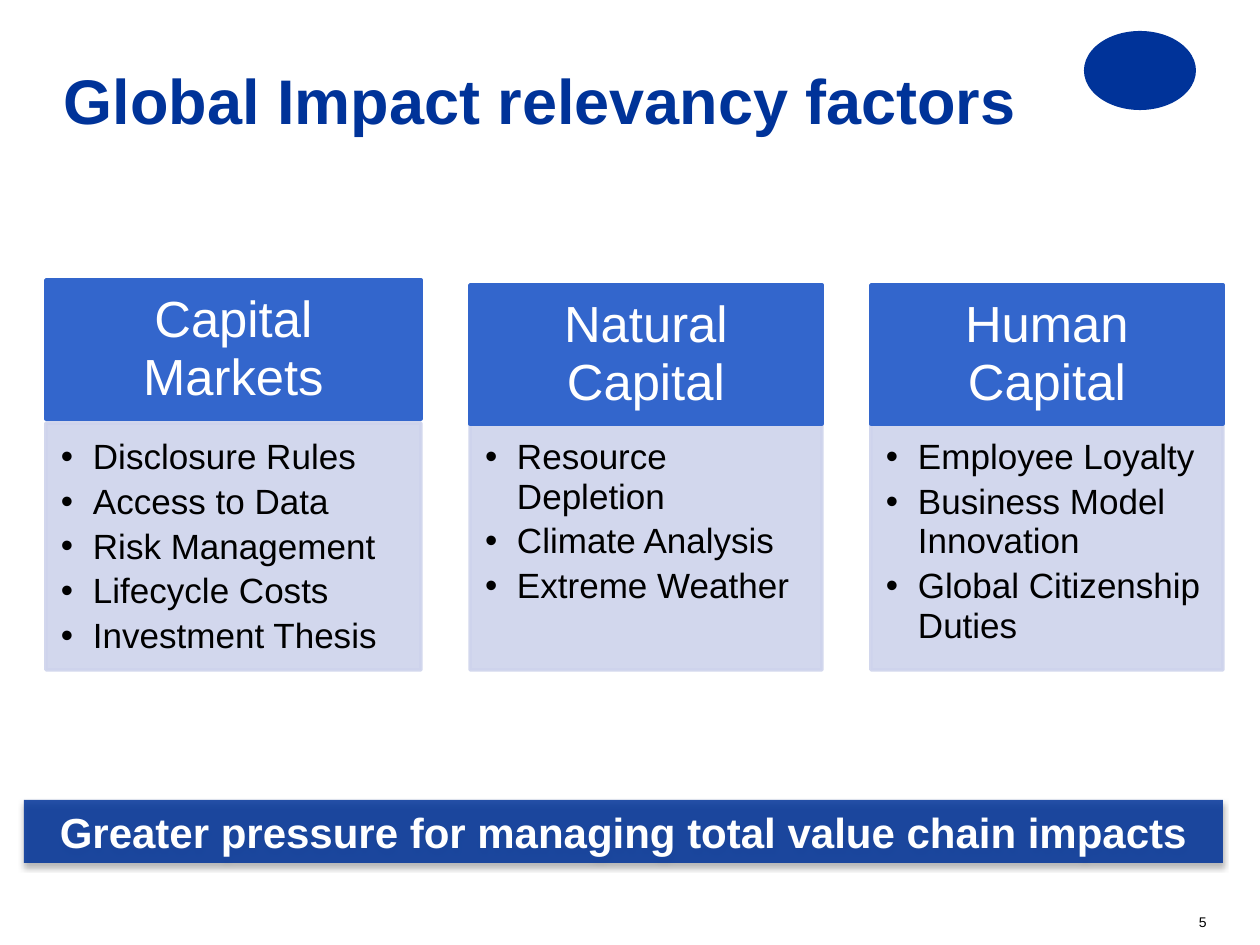
import pptx
import pptx.dml.color
import pptx.enum.shapes
import pptx.enum.text
import pptx.oxml
import pptx.oxml.ns
import pptx.util

RGBColor = pptx.dml.color.RGBColor
Anchor = pptx.enum.text.MSO_ANCHOR
Align = pptx.enum.text.PP_ALIGN
Preset = pptx.enum.shapes.MSO_SHAPE

NAVY = RGBColor(0x00, 0x33, 0x99)
BLUE = RGBColor(0x33, 0x66, 0xCC)
LAVENDER = RGBColor(0xCE, 0xD3, 0xEC)
WHITE = RGBColor(0xFF, 0xFF, 0xFF)
BLACK = RGBColor(0x00, 0x00, 0x00)

FONT = "Arial"
SCALE = 914400 / 126
HEADER_HEIGHT = 139
LIST_TOP, LIST_HEIGHT = 423, 247
LIST_INDENT = 32
LINE_SPACING = 0.94

FACTORS = [
    ("Capital Markets", 46, 280, 375,
     ["Disclosure Rules", "Access to Data", "Risk Management",
      "Lifecycle Costs", "Investment Thesis"]),
    ("Natural Capital", 470, 285, 352,
     ["Resource Depletion", "Climate Analysis", "Extreme Weather"]),
    ("Human Capital", 871, 285, 352,
     ["Employee Loyalty", "Business Model Innovation",
      "Global Citizenship Duties"]),
]


def px(length):
    return pptx.util.Emu(round(length * SCALE))


def xml(markup):
    namespace = pptx.oxml.ns.nsdecls("a")
    return pptx.oxml.parse_xml(markup.replace(">", f" {namespace}>", 1)
                               if "/>" not in markup.split(">")[0] + ">"
                               else markup.replace("/>", f" {namespace}/>", 1))


def place(shape, left, top, width, height):
    shape.left, shape.top = px(left), px(top)
    shape.width, shape.height = px(width), px(height)


def set_opacity(fill_parent, percent):
    for color in fill_parent.iter(pptx.oxml.ns.qn("a:srgbClr")):
        color.append(xml(f'<a:alpha val="{percent * 1000}"/>'))


def set_frame(frame, insets, anchor):
    frame.word_wrap = True
    frame.auto_size = pptx.enum.text.MSO_AUTO_SIZE.NONE
    frame.vertical_anchor = anchor
    (frame.margin_left, frame.margin_top,
     frame.margin_right, frame.margin_bottom) = map(px, insets)


def format_text(paragraph, size, color, bold=False, align=Align.LEFT):
    paragraph.alignment = align
    for run in paragraph.runs:
        run.font.name = FONT
        run.font.size = pptx.util.Pt(size)
        run.font.bold = bold
        run.font.color.rgb = color


def add_block(slide, preset, box, color):
    block = slide.shapes.add_shape(preset, *map(px, box))
    block.shadow.inherit = False
    block.fill.solid()
    block.fill.fore_color.rgb = color
    block.line.fill.background()
    return block


def outline(shape, color):
    shape.line.color.rgb = color
    shape.line.width = pptx.util.Pt(2)


def fill_title(title):
    place(title, 64, 63, 1008, 73)
    title.text_frame.text = "Global Impact relevancy factors"
    set_frame(title.text_frame, (0, 0, 0, 0), Anchor.MIDDLE)
    format_text(title.text_frame.paragraphs[0], 36, NAVY, bold=True)


def add_header(slide, heading, box):
    header = add_block(slide, Preset.RECTANGLE, box, BLUE)
    outline(header, BLUE)
    header.text_frame.text = heading
    set_frame(header.text_frame, (29, 16, 29, 16), Anchor.MIDDLE)
    paragraph = header.text_frame.paragraphs[0]
    paragraph.line_spacing = LINE_SPACING
    format_text(paragraph, 29, WHITE, align=Align.CENTER)


def fill_list(panel, items, box):
    place(panel, *box)
    panel.fill.solid()
    panel.fill.fore_color.rgb = LAVENDER
    outline(panel, LAVENDER)
    set_opacity(panel.element.spPr, 90)
    panel.text_frame.text = "\n".join(items)
    set_frame(panel.text_frame, (15, 15, 20, 21), Anchor.TOP)
    for paragraph in panel.text_frame.paragraphs:
        format_text(paragraph, 20, BLACK)
        paragraph.line_spacing = LINE_SPACING
        paragraph.space_before = pptx.util.Pt(0)
        paragraph.space_after = pptx.util.Pt(3)
        properties = paragraph._p.get_or_add_pPr()
        properties.set("marL", str(px(LIST_INDENT)))
        properties.set("indent", str(-px(LIST_INDENT)))
        properties.append(xml(f'<a:buFont typeface="{FONT}"/>'))
        properties.append(xml('<a:buChar char="•"/>'))


def add_banner(slide):
    banner = add_block(slide, Preset.RECTANGLE, (24, 800, 1199, 63), NAVY)
    set_opacity(banner.element.spPr, 85)
    effects = banner.element.spPr.find(pptx.oxml.ns.qn("a:effectLst"))
    effects.append(xml(
        '<a:outerShdw blurRad="44450" dist="27940" dir="5400000" rotWithShape="0">'
        '<a:srgbClr val="000000"><a:alpha val="32000"/></a:srgbClr>'
        '</a:outerShdw>'))
    banner.text_frame.text = "Greater pressure for managing total value chain impacts"
    set_frame(banner.text_frame, (13, 6, 13, 6), Anchor.MIDDLE)
    format_text(banner.text_frame.paragraphs[0], 24, WHITE, bold=True,
                align=Align.CENTER)


def add_page_number(slide):
    number = slide.shapes.add_textbox(*map(px, (1199, 914, 61, 31)))
    set_frame(number.text_frame, (0, 0, 0, 0), Anchor.TOP)
    number.text_frame.paragraphs[0]._p.append(xml(
        '<a:fld id="{B6F15528-21DE-4FAA-801E-634DDDAF4B2B}" type="slidenum">'
        f'<a:rPr lang="en-US" sz="800"><a:solidFill><a:srgbClr val="{BLACK}"/>'
        f'</a:solidFill><a:latin typeface="{FONT}"/></a:rPr><a:t>5</a:t></a:fld>'))


def main():
    deck = pptx.Presentation()
    deck.slide_width, deck.slide_height = px(1260), px(945)
    deck.element.set("firstSlideNum", "5")
    slide = deck.slides.add_slide(deck.slide_layouts[4])
    fill_title(slide.shapes.title)
    add_block(slide, Preset.OVAL, (1084, 31, 112, 79), NAVY)

    panels = {panel.placeholder_format.idx: panel for panel in slide.placeholders}
    spare = panels[3].element
    spare.getparent().remove(spare)
    for idx, (heading, left, top, width, items) in zip((1, 2, 4), FACTORS):
        add_header(slide, heading, (left, top, width, HEADER_HEIGHT))
        fill_list(panels[idx], items, (left, LIST_TOP, width, LIST_HEIGHT))

    add_banner(slide)
    add_page_number(slide)
    deck.save("out.pptx")


if __name__ == "__main__":
    main()
